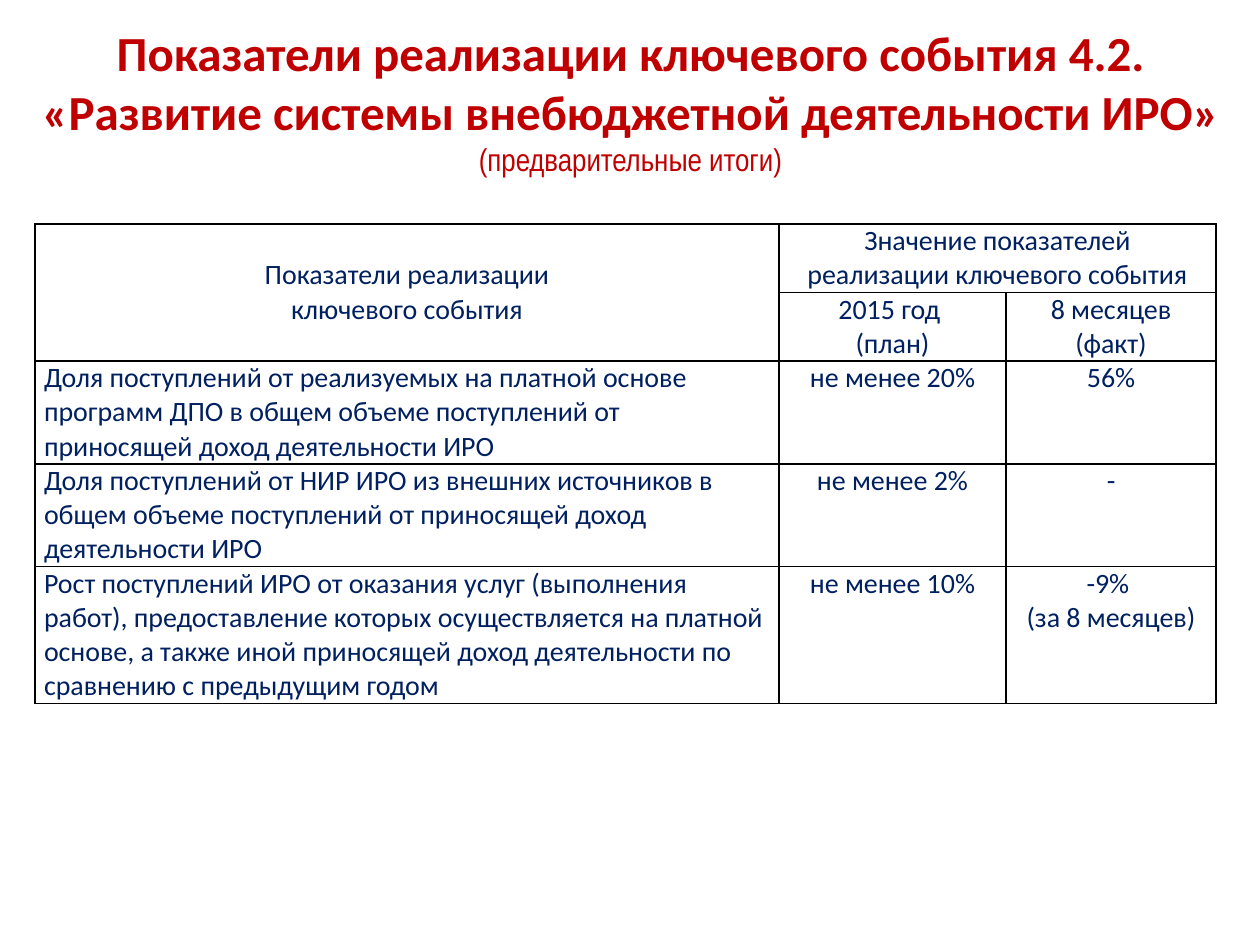
from copy import deepcopy

from lxml import etree
from pptx import Presentation
from pptx.dml.color import RGBColor
from pptx.enum.text import MSO_ANCHOR, MSO_AUTO_SIZE, PP_ALIGN
from pptx.oxml.ns import qn
from pptx.util import Emu, Pt

CENTER, LEFT = PP_ALIGN.CENTER, PP_ALIGN.LEFT
TOP, MIDDLE = MSO_ANCHOR.TOP, MSO_ANCHOR.MIDDLE
NO_AUTOFIT = MSO_AUTO_SIZE.NONE

RED = RGBColor(0xC0, 0x00, 0x00)
NAVY = RGBColor(0x00, 0x20, 0x60)
BLACK = RGBColor(0x00, 0x00, 0x00)

PX_PER_INCH = 126
COLUMN_WIDTHS = (744, 227, 210)
ROW_HEIGHTS = (67, 67, 101, 101, 134)
HEADER_ROWS = 2

HEADING = (
    ("Показатели реализации ключевого события 4.2.", 28, "Calibri", True),
    ("«Развитие системы внебюджетной деятельности ИРО»", 28, "Calibri", True),
    ("(предварительные итоги)", 18, "Arial Narrow", False),
)
INDICATORS = (
    ("Показатели реализации\vключевого события",
     "Значение показателей\vреализации ключевого события", ""),
    ("", "2015 год \n(план)", "8 месяцев (факт)"),
    ("Доля поступлений от реализуемых на платной основе программ ДПО в общем "
     "объеме поступлений от приносящей доход деятельности ИРО",
     "не менее 20%", "56%"),
    ("Доля поступлений от НИР ИРО из внешних источников в общем объеме "
     "поступлений от приносящей доход деятельности ИРО",
     "не менее 2%", "-"),
    ("Рост поступлений ИРО от оказания услуг (выполнения работ), предоставление "
     "которых осуществляется на платной основе, а также иной приносящей доход "
     "деятельности по сравнению с предыдущим годом",
     "не менее 10%", "-9% \n(за 8 месяцев)"),
)


def px(length):
    return Emu(round(length * 914400 / PX_PER_INCH))


def format_paragraph(paragraph, size, font, color, bold, align):
    paragraph.alignment = align
    for run in paragraph.runs:
        run.font.size = Pt(size)
        run.font.name = font
        run.font.bold = bold
        run.font.color.rgb = color
    for line_break in paragraph._p.findall(qn("a:br")):
        line_break.insert(0, deepcopy(paragraph.runs[0]._r.rPr))


def add_heading(slide):
    heading = slide.shapes.title
    heading.left, heading.top = px(25), px(16)
    heading.width, heading.height = px(1211), px(170)
    frame = heading.text_frame
    frame.auto_size = NO_AUTOFIT
    frame.vertical_anchor = TOP
    frame.text = "\n".join(line[0] for line in HEADING)
    for paragraph, (_, size, font, bold) in zip(frame.paragraphs, HEADING):
        format_paragraph(paragraph, size, font, RED, bold, CENTER)


def add_borders(cell):
    properties = cell._tc.get_or_add_tcPr()
    for position, side in enumerate(("lnL", "lnR", "lnT", "lnB")):
        border = etree.Element(qn(f"a:{side}"), w=str(Pt(1)))
        fill = etree.SubElement(border, qn("a:solidFill"))
        etree.SubElement(fill, qn("a:srgbClr"), val=str(BLACK))
        properties.insert(position, border)


def fill_cell(cell, text, align, anchor):
    cell.text = text
    cell.margin_left = cell.margin_right = px(9)
    cell.margin_top = cell.margin_bottom = 0
    cell.vertical_anchor = anchor
    cell.fill.background()
    add_borders(cell)
    for paragraph in cell.text_frame.paragraphs:
        format_paragraph(paragraph, 16, "Calibri", NAVY, False, align)


def add_indicators(slide):
    table = slide.shapes.add_table(
        len(ROW_HEIGHTS), len(COLUMN_WIDTHS), px(35), px(224),
        px(sum(COLUMN_WIDTHS)), px(sum(ROW_HEIGHTS))).table
    table.first_row = table.horz_banding = False
    for column, width in zip(table.columns, COLUMN_WIDTHS):
        column.width = px(width)
    for row, height in zip(table.rows, ROW_HEIGHTS):
        row.height = px(height)
    for row, texts in enumerate(INDICATORS):
        for column, text in enumerate(texts):
            is_description = column == 0 and row >= HEADER_ROWS
            fill_cell(table.cell(row, column), text,
                      LEFT if is_description else CENTER,
                      MIDDLE if row == 0 else TOP)
    table.cell(0, 0).merge(table.cell(1, 0))
    table.cell(0, 1).merge(table.cell(0, 2))


def main():
    presentation = Presentation()
    presentation.slide_width, presentation.slide_height = px(1260), px(945)
    slide = presentation.slides.add_slide(presentation.slide_layouts[5])
    add_heading(slide)
    add_indicators(slide)
    presentation.save("out.pptx")


if __name__ == "__main__":
    main()
